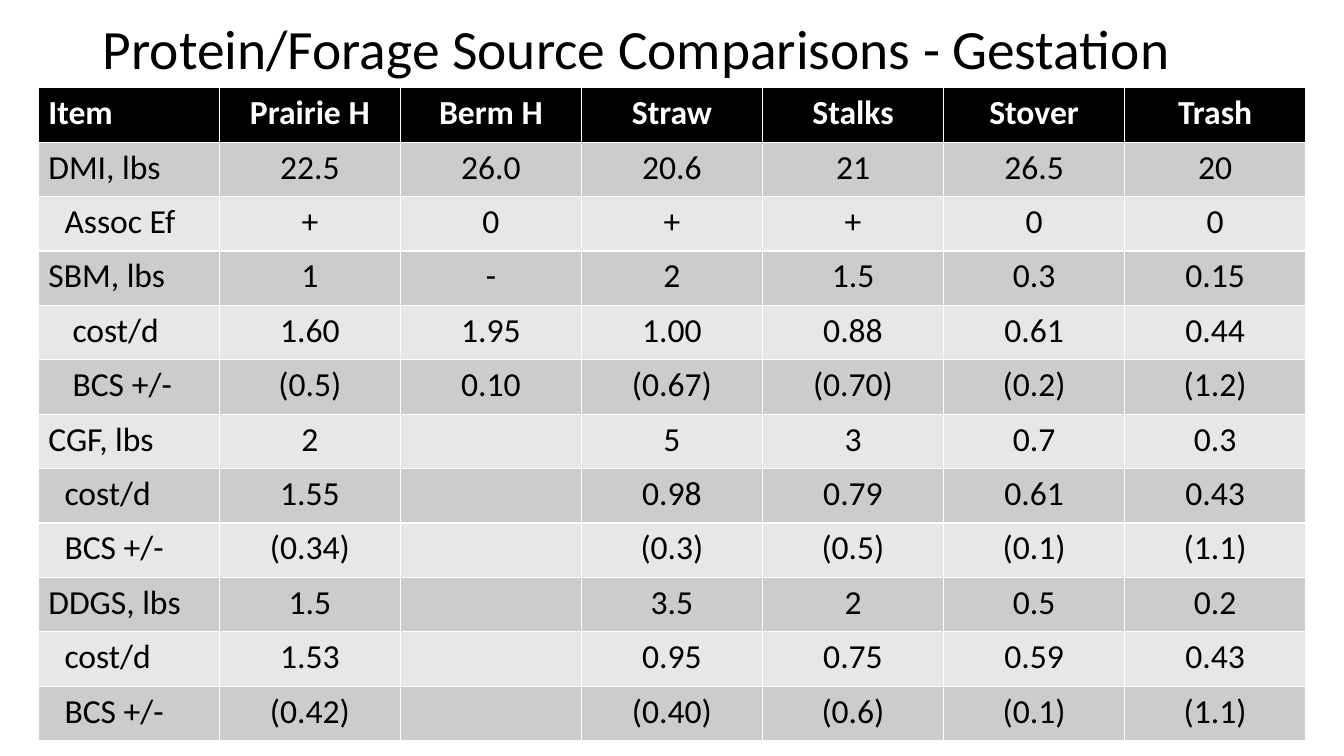
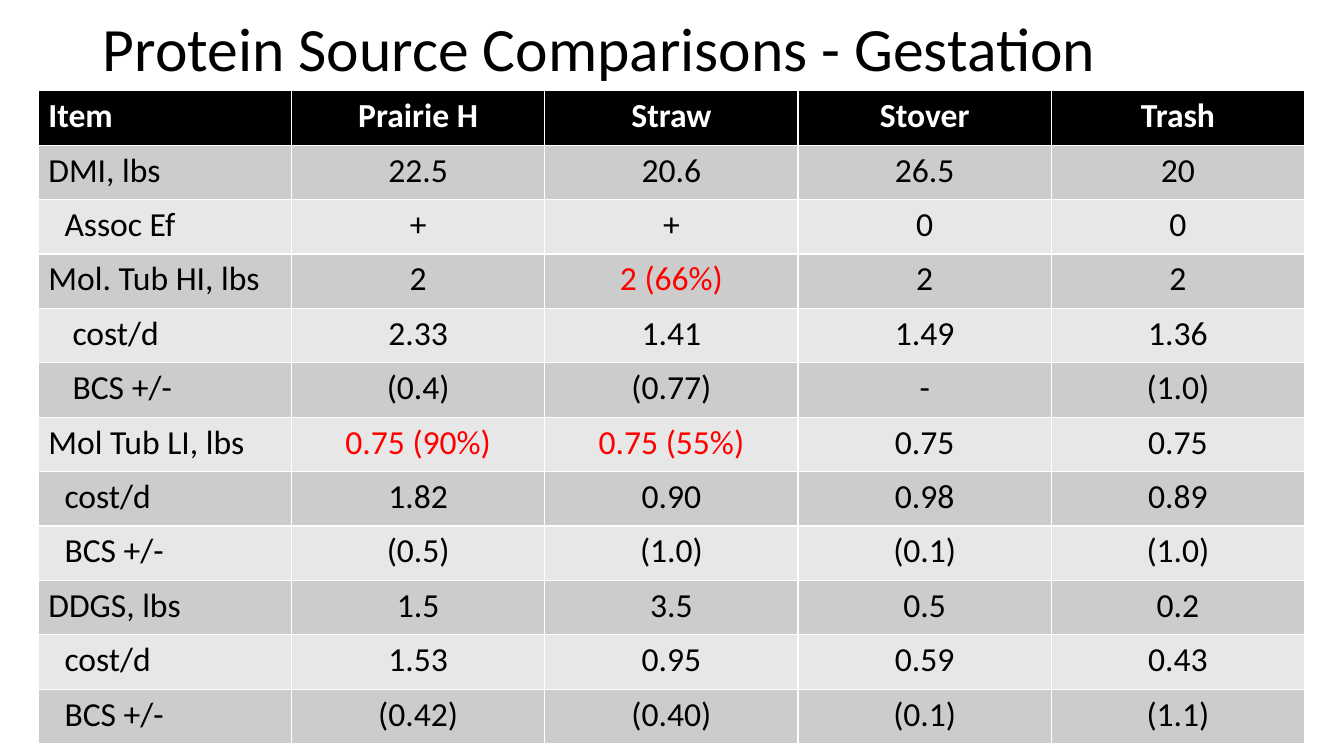
from dataclasses import dataclass

from pptx import Presentation
from pptx.dml.color import RGBColor
from pptx.enum import text
from pptx.presentation import Presentation as Deck
from pptx.util import Inches, Pt

COLORS = {
    "header": "000000",
    "header_text": "FFFFFF",
    "odd_row": "CCCCCC",
    "even_row": "E7E7E7",
    "text": "000000",
    "highlight": "FF0000",
}
FONT = "Calibri"
TABLE_LEFT = 0.38
ROW_HEIGHT = 0.54
CELL_MARGIN = 0.1
SPACE_WIDTH = 0.08


@dataclass(frozen=True)
class Row:
    label: str
    values: tuple[str, ...]
    indent: int = 0


@dataclass(frozen=True)
class Comparison:
    title: str
    title_size: float
    top: float
    width: float
    rows: tuple[Row, ...]


COMPARISONS = (
    Comparison("Protein/Forage Source Comparisons - Gestation", 39.6, 0.87, 12.57, (
        Row("Item", ("Prairie H", "Berm H", "Straw", "Stalks", "Stover", "Trash")),
        Row("DMI, lbs", ("22.5", "26.0", "20.6", "21", "26.5", "20")),
        Row("Assoc Ef", ("+", "0", "+", "+", "0", "0"), 2),
        Row("SBM, lbs", ("1", "-", "2", "1.5", "0.3", "0.15")),
        Row("cost/d", ("1.60", "1.95", "1.00", "0.88", "0.61", "0.44"), 3),
        Row("BCS +/-", ("(0.5)", "0.10", "(0.67)", "(0.70)", "(0.2)", "(1.2)"), 3),
        Row("CGF, lbs", ("2", "", "5", "3", "0.7", "0.3")),
        Row("cost/d", ("1.55", "", "0.98", "0.79", "0.61", "0.43"), 2),
        Row("BCS +/-", ("(0.34)", "", "(0.3)", "(0.5)", "(0.1)", "(1.1)"), 2),
        Row("DDGS, lbs", ("1.5", "", "3.5", "2", "0.5", "0.2")),
        Row("cost/d", ("1.53", "", "0.95", "0.75", "0.59", "0.43"), 2),
        Row("BCS +/-", ("(0.42)", "", "(0.40)", "(0.6)", "(0.1)", "(1.1)"), 2),
    )),
    Comparison("Protein Source Comparisons - Gestation", 44, 0.9, 12.56, (
        Row("Item", ("Prairie H", "Straw", "Stover", "Trash")),
        Row("DMI, lbs", ("22.5", "20.6", "26.5", "20")),
        Row("Assoc Ef", ("+", "+", "0", "0"), 2),
        Row("Mol. Tub HI, lbs", ("2", "2 (66%)", "2", "2")),
        Row("cost/d", ("2.33", "1.41", "1.49", "1.36"), 3),
        Row("BCS +/-", ("(0.4)", "(0.77)", "-", "(1.0)"), 3),
        Row("Mol Tub LI, lbs", ("0.75 (90%)", "0.75 (55%)", "0.75", "0.75")),
        Row("cost/d", ("1.82", "0.90", "0.98", "0.89"), 2),
        Row("BCS +/-", ("(0.5)", "(1.0)", "(0.1)", "(1.0)"), 2),
        Row("DDGS, lbs", ("1.5", "3.5", "0.5", "0.2")),
        Row("cost/d", ("1.53", "0.95", "0.59", "0.43"), 2),
        Row("BCS +/-", ("(0.42)", "(0.40)", "(0.1)", "(1.1)"), 2),
    )),
)


def color(name: str) -> RGBColor:
    return RGBColor.from_string(COLORS[name])


def style_font(paragraph, size: float, color_name: str, bold: bool = False) -> None:
    font = paragraph.font
    font.name = FONT
    font.size = Pt(size)
    font.bold = bold
    font.color.rgb = color(color_name)


def set_title(slide, comparison: Comparison) -> None:
    title = slide.shapes.title
    title.left, title.top = Inches(0.92), Inches(0)
    title.width, title.height = Inches(11.5), Inches(1.03)
    frame = title.text_frame
    frame.text = comparison.title
    frame.vertical_anchor = text.MSO_ANCHOR.MIDDLE
    frame.auto_size = text.MSO_AUTO_SIZE.NONE
    paragraph = frame.paragraphs[0]
    paragraph.alignment = text.PP_ALIGN.LEFT
    paragraph.line_spacing = 0.9
    style_font(paragraph, comparison.title_size, "text")


def fill_cell(cell, content: str, row_index: int, is_label: bool) -> None:
    is_header = row_index == 0
    band = "header" if is_header else "odd_row" if row_index % 2 else "even_row"
    cell.fill.solid()
    cell.fill.fore_color.rgb = color(band)
    cell.text = content
    paragraph = cell.text_frame.paragraphs[0]
    paragraph.alignment = text.PP_ALIGN.LEFT if is_label else text.PP_ALIGN.CENTER
    text_color = "header_text" if is_header else "highlight" if "%" in content else "text"
    style_font(paragraph, 24, text_color, is_header)


def add_comparison_table(slide, comparison: Comparison) -> None:
    rows = comparison.rows
    column_count = len(rows[0].values) + 1
    table = slide.shapes.add_table(
        len(rows), column_count, Inches(TABLE_LEFT), Inches(comparison.top),
        Inches(comparison.width), Inches(ROW_HEIGHT * len(rows)),
    ).table
    for row_index, row in enumerate(rows):
        for column_index, content in enumerate((row.label, *row.values)):
            fill_cell(table.cell(row_index, column_index), content, row_index, column_index == 0)
        table.cell(row_index, 0).margin_left = Inches(CELL_MARGIN + SPACE_WIDTH * row.indent)


def add_comparison_slide(presentation: Deck, comparison: Comparison) -> None:
    slide = presentation.slides.add_slide(presentation.slide_layouts[5])
    set_title(slide, comparison)
    add_comparison_table(slide, comparison)


def main() -> None:
    presentation = Presentation()
    presentation.slide_width = Inches(13.33)
    presentation.slide_height = Inches(7.5)
    for comparison in COMPARISONS:
        add_comparison_slide(presentation, comparison)
    presentation.save("out.pptx")


if __name__ == "__main__":
    main()
